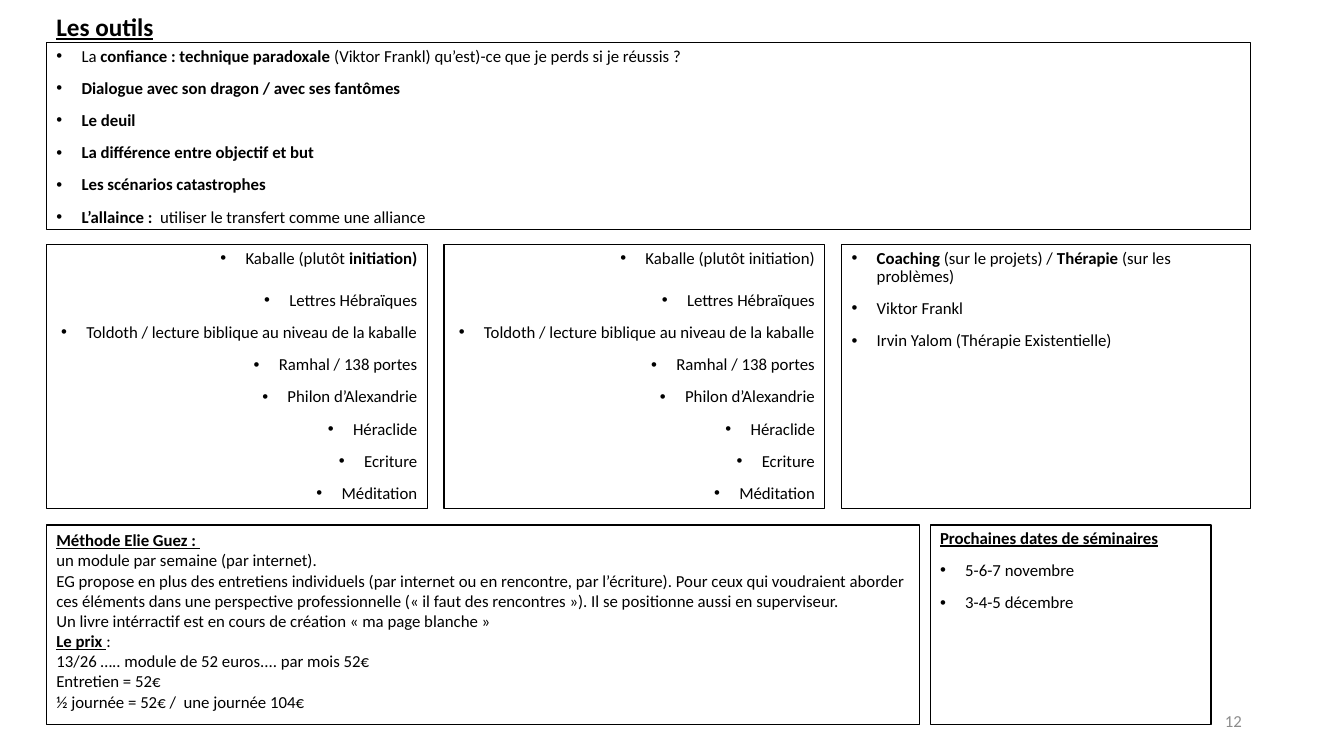
from lxml.etree import SubElement
from pptx import Presentation
from pptx.dml.color import RGBColor
from pptx.enum.shapes import MSO_SHAPE
from pptx.enum.text import MSO_ANCHOR, PP_ALIGN
from pptx.oxml.ns import qn
from pptx.util import Cm, Pt

BLACK = RGBColor(0x00, 0x00, 0x00)
GREY = RGBColor(0x8C, 0x8C, 0x8C)

LEFT, WIDTH, GAP = 1.17, 30.35, 0.42
COLUMN_WIDTH = 9.6
COLUMNS_TOP, COLUMNS_HEIGHT = 6.17, 6.65
BOTTOM_TOP, BOTTOM_HEIGHT = 13.23, 5.03

PLAIN, BOLD, HEADING = {}, {"bold": True}, {"bold": True, "underline": True}
LISTED = {"line_spacing": 0.9, "space_before": Pt(10)}
LISTED_RIGHT = {**LISTED, "alignment": PP_ALIGN.RIGHT}
AFTER_KABALLE = {**LISTED_RIGHT, "space_before": Pt(17.2)}

TOOLS = [
    [("La ", PLAIN), ("confiance : technique paradoxale ", BOLD),
     ("(Viktor Frankl) qu’est)-ce que je perds si je réussis ?", PLAIN)],
    [("Dialogue avec son dragon / avec ses fantômes", BOLD)],
    [("Le deuil", BOLD)],
    [("La différence entre objectif et but", BOLD)],
    [("Les scénarios catastrophes", BOLD)],
    [("L’allaince : ", BOLD), (" utiliser le transfert comme une alliance", PLAIN)],
]
KABALLE_TOPICS = [
    "Lettres Hébraïques",
    "Toldoth / lecture biblique au niveau de la kaballe",
    "Ramhal / 138 portes",
    "Philon d’Alexandrie",
    "Héraclide",
    "Ecriture",
    "Méditation",
]
COACHING = [
    [("Coaching", BOLD), (" (sur le projets) / ", PLAIN),
     ("Thérapie ", BOLD), ("(sur les problèmes)", PLAIN)],
    [("Viktor Frankl", PLAIN)],
    [("Irvin Yalom (Thérapie Existentielle)", PLAIN)],
]
METHOD = [
    [("Méthode Elie Guez : ", HEADING)],
    [("un module par semaine (par internet).", PLAIN)],
    [("EG propose en plus des entretiens individuels (par internet ou en rencontre, "
      "par l’écriture). Pour ceux qui voudraient aborder ces éléments dans une "
      "perspective professionnelle (« il faut des rencontres »). "
      "Il se positionne aussi en superviseur.", PLAIN)],
    [("Un livre intérractif est en cours de création « ma page blanche »", PLAIN)],
    [("Le prix ", HEADING), (":", PLAIN)],
    [("13/26 ….. module de 52 euros.... par mois 52€", PLAIN)],
    [("Entretien = 52€", PLAIN)],
    [("½ journée = 52€ /  une journée 104€", PLAIN)],
]
SEMINAR_DATES = ["5-6-7 novembre", "3-4-5 décembre"]


def apply_format(target, values):
    """Set each named format value on the target."""
    for name, value in values.items():
        setattr(target, name, value)


def add_bullet(paragraph):
    """Give the paragraph a hanging round bullet."""
    properties = paragraph._p.get_or_add_pPr()
    properties.set("marL", str(Cm(0.635)))
    properties.set("indent", str(-Cm(0.635)))
    SubElement(properties, qn("a:buFont")).set("typeface", "Arial")
    SubElement(properties, qn("a:buChar")).set("char", "•")


def write_paragraph(paragraph, runs, layout, bulleted=False, size=12, color=BLACK):
    """Fill one paragraph with styled runs."""
    apply_format(paragraph, layout)
    if bulleted:
        add_bullet(paragraph)
    for text, style in runs:
        run = paragraph.add_run()
        run.text = text
        apply_format(run.font, {"name": "Calibri", "size": Pt(size), **style})
        run.font.color.rgb = color


def add_panel(slide, box, paragraphs):
    """Draw a black-bordered panel holding (runs, layout, bulleted) paragraphs."""
    panel = slide.shapes.add_shape(MSO_SHAPE.RECTANGLE, *map(Cm, box))
    panel.shadow.inherit = False
    panel.fill.background()
    panel.line.color.rgb = BLACK
    panel.line.width = Pt(0.75)
    frame = panel.text_frame
    apply_format(frame, {"word_wrap": True, "vertical_anchor": MSO_ANCHOR.TOP})
    for index, (runs, layout, bulleted) in enumerate(paragraphs):
        paragraph = frame.add_paragraph() if index else frame.paragraphs[0]
        write_paragraph(paragraph, runs, {"alignment": PP_ALIGN.LEFT, **layout}, bulleted)


def add_label(slide, box, runs, layout, **look):
    """Place a single vertically centred line of text."""
    frame = slide.shapes.add_textbox(*map(Cm, box)).text_frame
    apply_format(frame, {"word_wrap": True, "vertical_anchor": MSO_ANCHOR.MIDDLE})
    write_paragraph(frame.paragraphs[0], runs, layout, **look)


def add_list_panel(slide, box, items):
    """Draw a panel of left-aligned bullets."""
    add_panel(slide, box, [(runs, LISTED, True) for runs in items])


def add_kaballe_panel(slide, box, initiation_style):
    """Draw a panel of right-aligned kaballe topics under their lead line."""
    lead = [("Kaballe (plutôt ", PLAIN), ("initiation)", initiation_style)]
    topics = [([(topic, PLAIN)], LISTED_RIGHT if index else AFTER_KABALLE, True)
              for index, topic in enumerate(KABALLE_TOPICS)]
    add_panel(slide, box, [(lead, LISTED_RIGHT, True), *topics])


def add_seminar_panel(slide, box):
    """Draw the panel of coming seminar dates."""
    heading = ([("Prochaines dates de séminaires", HEADING)], LISTED, False)
    dates = [([(date, PLAIN)], LISTED, True) for date in SEMINAR_DATES]
    add_panel(slide, box, [heading, *dates])


def add_tools_slide(presentation):
    """Build the slide of tools, topics, method and dates."""
    slide = presentation.slides.add_slide(presentation.slide_layouts[6])
    add_label(slide, (LEFT, 0.36, WIDTH, 0.71), [("Les outils", HEADING)],
              {"line_spacing": 0.9}, size=18)
    add_list_panel(slide, (LEFT, 1.08, WIDTH, 4.7), TOOLS)
    for column, style in enumerate((BOLD, PLAIN)):
        left = LEFT + column * (COLUMN_WIDTH + GAP)
        add_kaballe_panel(slide, (left, COLUMNS_TOP, COLUMN_WIDTH, COLUMNS_HEIGHT), style)
    coaching_left = LEFT + 2 * (COLUMN_WIDTH + GAP)
    add_list_panel(slide, (coaching_left, COLUMNS_TOP, LEFT + WIDTH - coaching_left,
                           COLUMNS_HEIGHT), COACHING)
    add_panel(slide, (LEFT, BOTTOM_TOP, 22, BOTTOM_HEIGHT),
              [(runs, PLAIN, False) for runs in METHOD])
    add_seminar_panel(slide, (23.44, BOTTOM_TOP, 7.08, BOTTOM_HEIGHT))
    add_label(slide, (23.93, 17.65, 7.62, 1.02), [("12", PLAIN)],
              {"alignment": PP_ALIGN.RIGHT}, color=GREY)


def main():
    """Create and save the presentation."""
    presentation = Presentation()
    apply_format(presentation, {"slide_width": Cm(33.87), "slide_height": Cm(19.05)})
    add_tools_slide(presentation)
    presentation.save("out.pptx")


if __name__ == "__main__":
    main()
